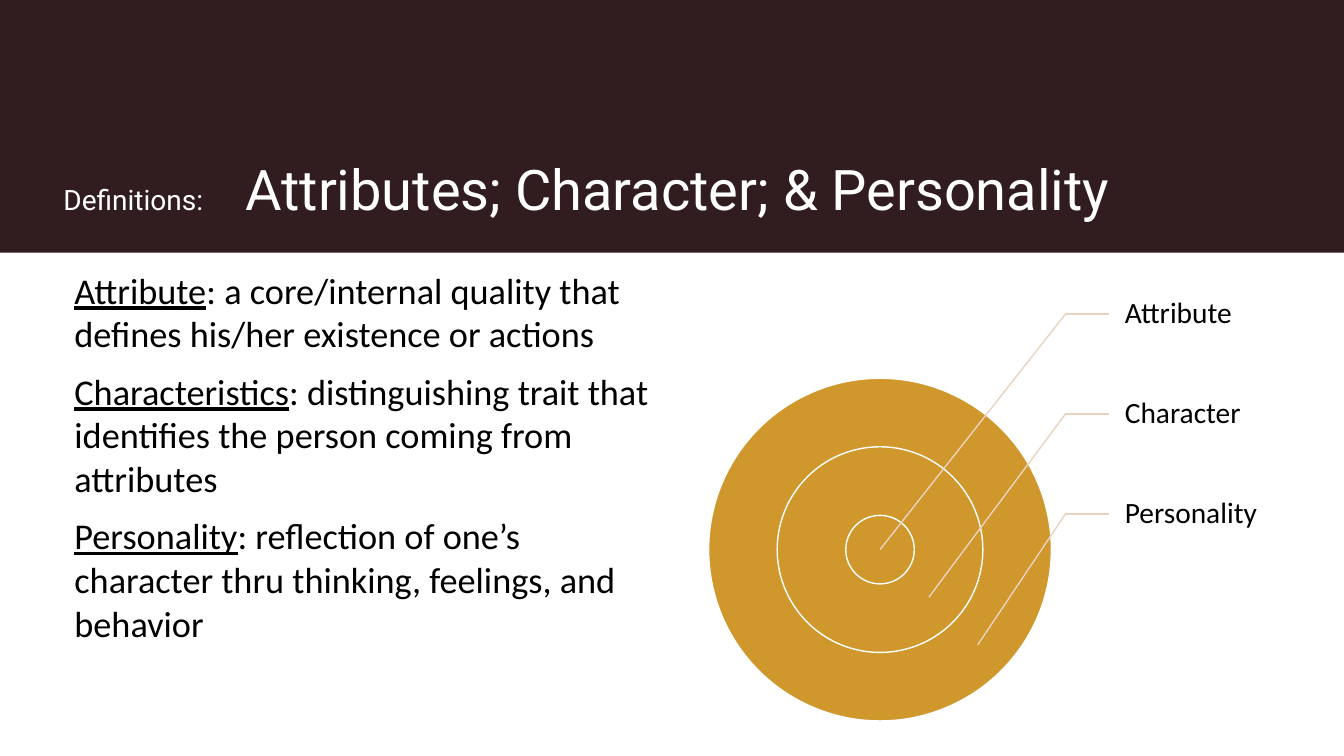
from lxml.etree import SubElement
from pptx import Presentation
from pptx.dml.color import RGBColor
from pptx.enum.shapes import MSO_CONNECTOR as Link, MSO_SHAPE as Preset
from pptx.enum.text import MSO_ANCHOR as Anchor
from pptx.oxml.ns import qn
from pptx.util import Pt

TITLE = [("Definitions:\t", 20), ("Attributes; Character; & Personality", 40)]
DEFINITIONS = [
    ("Attribute", ": a core/internal quality that defines his/her existence or actions"),
    ("Characteristics", ": distinguishing trait that identifies the person coming from attributes"),
    ("Personality", ": reflection of one’s character thru thinking, feelings, and behavior"),
]
RINGS = ["Attribute", "Character", "Personality"]
COLORS = {"band": "311C20", "gold": "CF972C", "leader": "E9D3BE",
          "white": "FFFFFF", "black": "000000"}

CENTER_X, CENTER_Y = 628.6, 392.6
CORE_RADIUS = 24.48
RING_STEP = 48.96
TARGET_STEP_X, TARGET_STEP_Y = 34.9, 34
BEND_X, LABEL_X = 761, 792
LABEL_WIDTH, LABEL_HEIGHT = 122.4, 71.4
FIRST_LABEL_Y = 224.4
TITLE_TAB = 130


def color(name):
    return RGBColor.from_string(COLORS[name])


def add_shape(page, preset, left, top, width, height, fill):
    shape = page.shapes.add_shape(preset, Pt(left), Pt(top), Pt(width), Pt(height))
    shape.shadow.inherit = False
    shape.fill.solid()
    shape.fill.fore_color.rgb = color(fill)
    return shape


def add_box(page, left, top, width, height, anchor):
    box = page.shapes.add_textbox(Pt(left), Pt(top), Pt(width), Pt(height))
    box.text_frame.word_wrap = True
    box.text_frame.vertical_anchor = anchor
    return box


def add_span(para, text, size, font, ink):
    span = para.add_run()
    span.text = text
    span.font.size = Pt(size)
    span.font.name = font
    span.font.color.rgb = color(ink)
    return span


def add_leader(page, start_x, start_y, end_x, end_y):
    leader = page.shapes.add_connector(
        Link.STRAIGHT, Pt(start_x), Pt(start_y), Pt(end_x), Pt(end_y))
    leader.line.color.rgb = color("leader")
    leader.line.width = Pt(1)
    SubElement(leader._element.spPr, qn("a:effectLst"))
    return leader


def add_title(page):
    band = add_shape(page, Preset.RECTANGLE, 0, 0, 960, 180.5, "band")
    band.line.fill.background()
    box = add_box(page, 38.2, 28.8, 887, 133.2, Anchor.BOTTOM)
    para = box.text_frame.paragraphs[0]
    tabs = SubElement(para._p.get_or_add_pPr(), qn("a:tabLst"))
    SubElement(tabs, qn("a:tab"), pos=str(Pt(TITLE_TAB)), algn="l")
    for text, size in TITLE:
        add_span(para, text, size, "Roboto", "white")


def add_definitions(page):
    frame = add_box(page, 46.1, 187.9, 427, 327.6, Anchor.TOP).text_frame
    for index, (term, meaning) in enumerate(DEFINITIONS):
        para = frame.add_paragraph() if index else frame.paragraphs[0]
        para.space_before = Pt(10)
        add_span(para, term, 25.9, "Calibri", "black").font.underline = True
        add_span(para, meaning, 25.9, "Calibri", "black")


def add_rings(page):
    for index in reversed(range(len(RINGS))):
        radius = CORE_RADIUS + index * RING_STEP
        ring = add_shape(page, Preset.OVAL, CENTER_X - radius, CENTER_Y - radius,
                         2 * radius, 2 * radius, "gold")
        ring.line.color.rgb = color("white")
        ring.line.width = Pt(1)


def add_labels(page):
    for index, name in enumerate(RINGS):
        middle = FIRST_LABEL_Y + index * LABEL_HEIGHT
        label = add_box(page, LABEL_X, middle - LABEL_HEIGHT / 2,
                        LABEL_WIDTH, LABEL_HEIGHT, Anchor.MIDDLE)
        frame = label.text_frame
        frame.margin_left = Pt(11.5)
        frame.margin_top = frame.margin_right = frame.margin_bottom = Pt(2)
        para = frame.paragraphs[0]
        para.line_spacing = 0.9
        add_span(para, name, 21, "Calibri", "black")
        add_leader(page, BEND_X, middle, LABEL_X, middle).end_connect(label, 1)
        add_leader(page, BEND_X, middle, CENTER_X + index * TARGET_STEP_X,
                   CENTER_Y + index * TARGET_STEP_Y)


def main():
    deck = Presentation()
    deck.slide_width, deck.slide_height = Pt(960), Pt(540)
    page = deck.slides.add_slide(deck.slide_layouts[6])
    add_title(page)
    add_definitions(page)
    add_rings(page)
    add_labels(page)
    deck.save("out.pptx")


if __name__ == "__main__":
    main()
